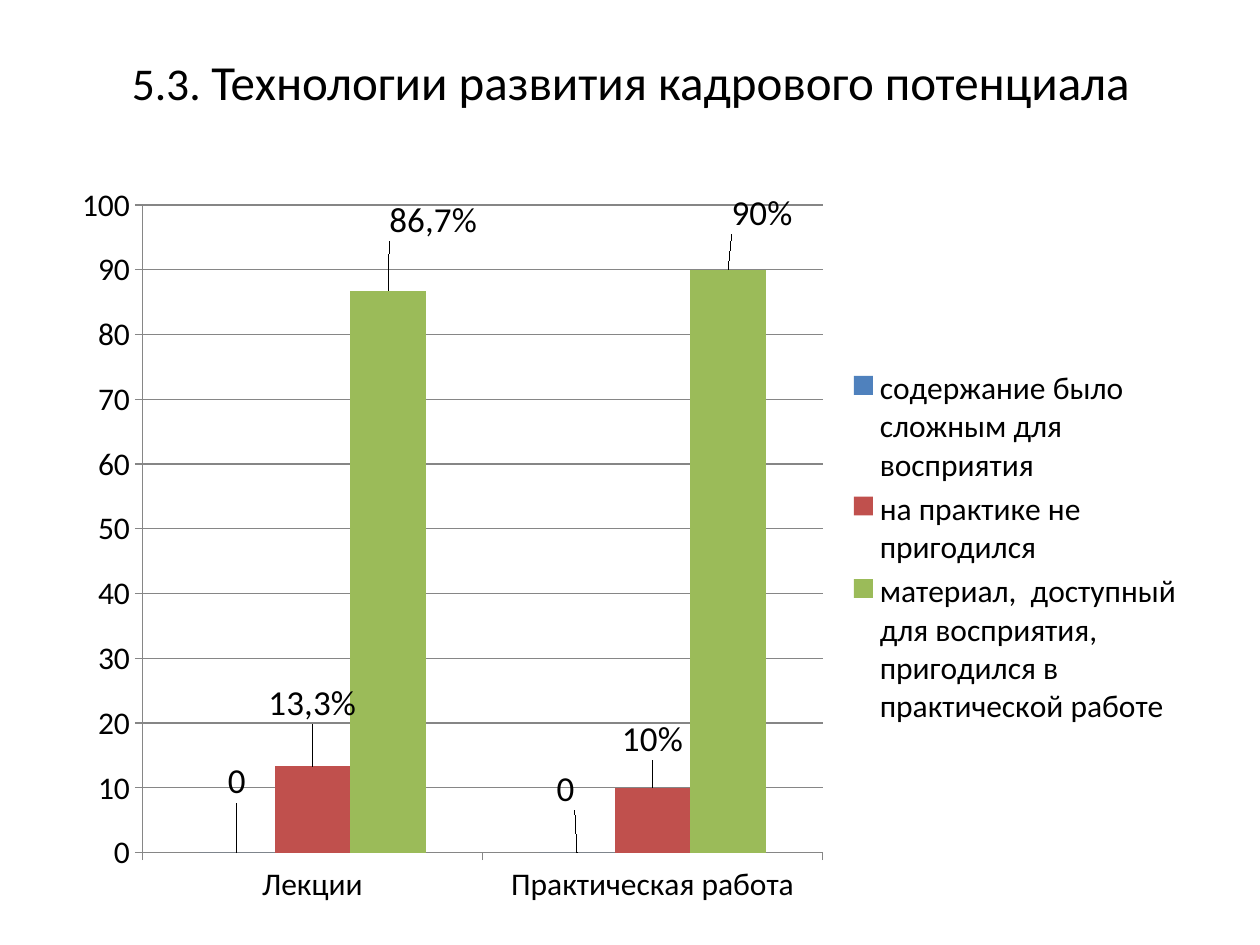
from lxml.etree import SubElement, Element
from pptx import Presentation
from pptx.chart.data import CategoryChartData
from pptx.dml.color import RGBColor
from pptx.enum.chart import XL_CHART_TYPE as ChartType, XL_LABEL_POSITION as LabelPos
from pptx.enum.chart import XL_LEGEND_POSITION as LegendPos, XL_TICK_MARK as Tick
from pptx.enum.text import MSO_ANCHOR as Anchor, PP_ALIGN as Align
from pptx.oxml.ns import qn
from pptx.util import Inches, Pt

THEME = {
    "font": "Calibri",
    "text": "000000", "axis": "868686",
    "number": 26, "title": 28, "chart": 18, "label": 20,
}

TITLE = [("5.3. ", "number"), ("Технологии развития кадрового потенциала", "title")]
TITLE_BOX = (0.2, 0.3, 9.61, 0.69)
CHART_BOX = (0.5, 1.39, 9, 5.91)
PLOT_AREA = {"x": 0.07, "y": 0.04, "w": 0.6, "h": 0.87}

CATEGORIES = ["Лекции", "Практическая работа"]
# Each point: value, label text (None shows the value), label shift as a share of the chart
ANSWERS = [
    ("содержание было сложным для восприятия", "4F81BD",
     [(0, None, (0, -0.06)), (0, None, (-0.01, -0.05))]),
    ("на практике не пригодился", "C0504D",
     [(13.3, "13,3%", (0, -0.05)), (10, "10%", (0, -0.03))]),
    ("материал,  доступный для восприятия, пригодился в практической работе", "9BBB59",
     [(86.7, "86,7%", (0.04, -0.06)), (90, "90%", (0.03, -0.04))]),
]


def set_font(font, size):
    formats = {"name": THEME["font"], "size": Pt(THEME[size]), "bold": False}
    for key, value in formats.items():
        setattr(font, key, value)
    font.color.rgb = RGBColor.from_string(THEME["text"])


def manual_layout(**settings):
    layout = Element(qn("c:layout"))
    manual = SubElement(layout, qn("c:manualLayout"))
    for tag, value in settings.items():
        SubElement(manual, qn(f"c:{tag}")).set("val", str(value))
    return layout


def add_title(slide):
    frame = slide.shapes.add_textbox(*map(Inches, TITLE_BOX)).text_frame
    frame.word_wrap = True
    frame.vertical_anchor = Anchor.MIDDLE
    heading = frame.paragraphs[0]
    heading.alignment = Align.CENTER
    for text, size in TITLE:
        run = heading.add_run()
        run.text = text
        set_font(run.font, size)


def style_axes(chart):
    for axis in (chart.category_axis, chart.value_axis):
        axis.major_tick_mark = Tick.OUTSIDE
        axis.minor_tick_mark = Tick.NONE
        set_font(axis.tick_labels.font, "chart")
    values = chart.value_axis
    for key, value in {"minimum_scale": 0, "maximum_scale": 100, "major_unit": 10,
                       "has_major_gridlines": True}.items():
        setattr(values, key, value)
    for part in (chart.category_axis, values, values.major_gridlines):
        part.format.line.color.rgb = RGBColor.from_string(THEME["axis"])
        part.format.line.width = Pt(0.75)


def label_points(series, points):
    labels = series.data_labels
    labels.show_value = True
    labels.position = LabelPos.OUTSIDE_END
    set_font(labels.font, "label")
    for index, (_, text, _) in enumerate(points):
        label = series.points[index].data_label
        if text is None:
            set_font(label.font, "label")
        else:
            run = label.text_frame.paragraphs[0].add_run()
            run.text = text
            set_font(run.font, "label")
        label.position = LabelPos.OUTSIDE_END
    for label_xml, (_, _, (dx, dy)) in zip(labels._element.findall(qn("c:dLbl")), points):
        label_xml.insert(1, manual_layout(x=dx, y=dy))


def add_answer_chart(slide):
    chart_data = CategoryChartData()
    chart_data.categories = CATEGORIES
    for name, _, points in ANSWERS:
        chart_data.add_series(name, [value for value, _, _ in points])
    chart = slide.shapes.add_chart(
        ChartType.COLUMN_CLUSTERED, *map(Inches, CHART_BOX), chart_data).chart
    set_font(chart.font, "chart")
    chart.has_title = False
    chart.has_legend = True
    chart.legend.position = LegendPos.RIGHT
    chart.legend.include_in_layout = False
    set_font(chart.legend.font, "chart")
    style_axes(chart)

    plot = chart.plots[0]
    plot.gap_width = 150
    plot.overlap = 0
    plot.vary_by_categories = False
    for series, (_, color, points) in zip(plot.series, ANSWERS):
        series.format.fill.solid()
        series.format.fill.fore_color.rgb = RGBColor.from_string(color)
        label_points(series, points)

    plot_area = chart._chartSpace.chart.plotArea
    for old_layout in plot_area.findall(qn("c:layout")):
        plot_area.remove(old_layout)
    plot_area.insert(0, manual_layout(
        layoutTarget="inner", xMode="edge", yMode="edge", **PLOT_AREA))


def main():
    deck = Presentation()
    deck.slide_width, deck.slide_height = Inches(10), Inches(7.5)
    slide = deck.slides.add_slide(deck.slide_layouts[6])
    add_title(slide)
    add_answer_chart(slide)
    deck.save("out.pptx")


if __name__ == "__main__":
    main()
